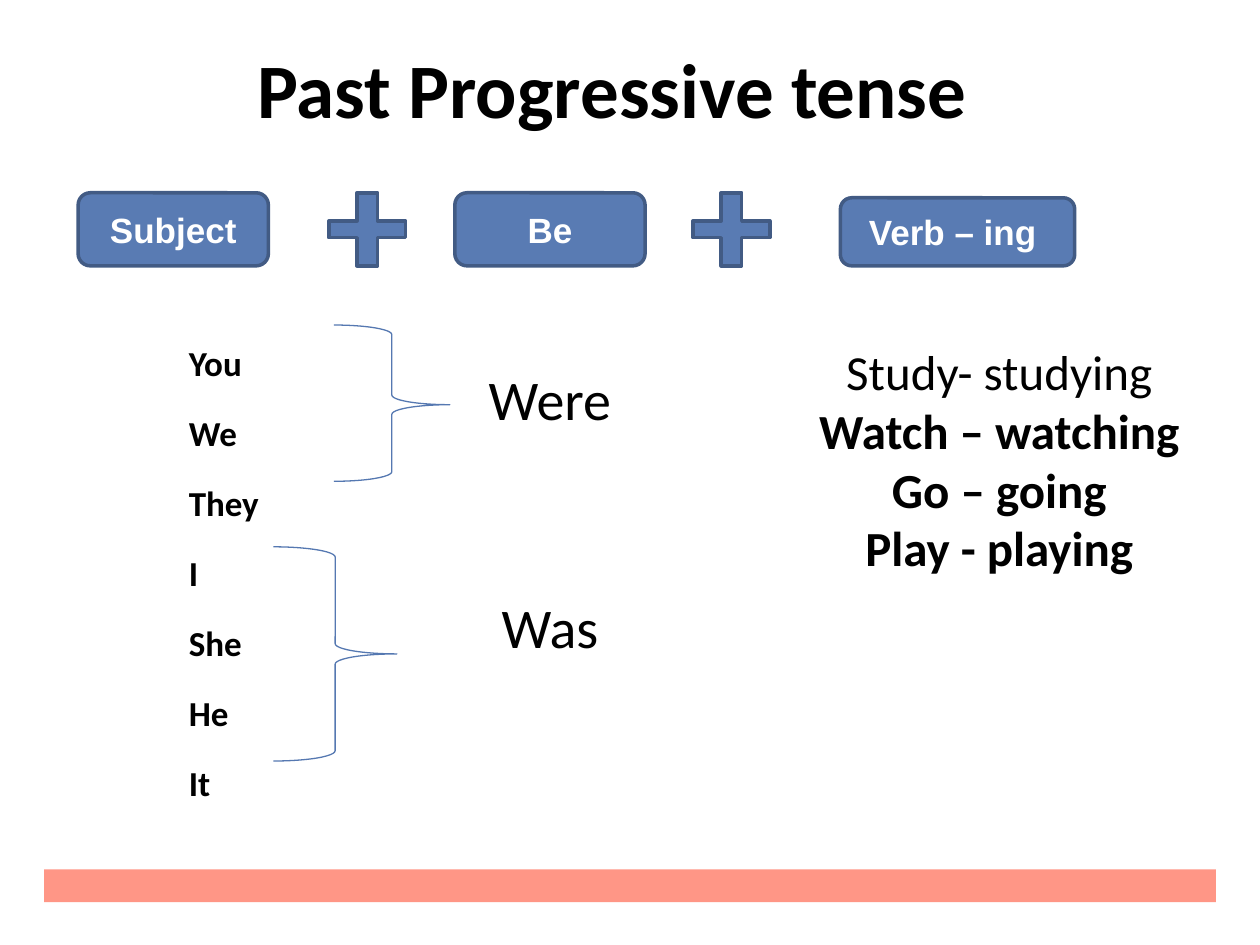
from pptx import Presentation
from pptx.dml.color import RGBColor
from pptx.enum.shapes import MSO_SHAPE
from pptx.enum.text import MSO_ANCHOR, PP_ALIGN
from pptx.util import Inches, Pt

BLACK = RGBColor(0x00, 0x00, 0x00)
WHITE = RGBColor(0xFF, 0xFF, 0xFF)
BLUE = RGBColor(0x59, 0x7B, 0xB3)
DARK_BLUE = RGBColor(0x42, 0x5B, 0x84)
BRACE_BLUE = RGBColor(0x55, 0x78, 0xB1)
SALMON = RGBColor(0xFF, 0x96, 0x86)


def add_shape(kind, left, top, width, height, fill=None, line=None, line_width=2):
    shape = page.shapes.add_shape(
        kind, Inches(left), Inches(top), Inches(width), Inches(height))
    shape.shadow.inherit = False
    if fill is None:
        shape.fill.background()
    else:
        shape.fill.solid()
        shape.fill.fore_color.rgb = fill
    if line is None:
        shape.line.fill.background()
    else:
        shape.line.color.rgb = line
        shape.line.width = Pt(line_width)
    return shape


def write_lines(shape, lines, size, bold=False, color=BLACK, font="Calibri",
                align=PP_ALIGN.CENTER):
    """Fill the shape with one paragraph per line and return the paragraphs."""
    frame = shape.text_frame
    frame.word_wrap = True
    frame.margin_left = frame.margin_right = Inches(0.1)
    frame.margin_top = frame.margin_bottom = Inches(0.1)
    frame.text = "\n".join(lines)
    for paragraph in frame.paragraphs:
        paragraph.alignment = align
        paragraph.font.name = font
        paragraph.font.size = Pt(size)
        paragraph.font.bold = bold
        paragraph.font.color.rgb = color
    return frame.paragraphs


deck = Presentation()
deck.slide_width, deck.slide_height = Inches(10), Inches(7.5)
page = deck.slides.add_slide(deck.slide_layouts[6])

add_shape(MSO_SHAPE.RECTANGLE, 0.35, 6.9, 9.3, 0.26, fill=SALMON)

# Formula: Subject + Be + Verb-ing
for label, left, top, width, height in [
    ("Subject", 0.62, 1.53, 1.51, 0.58),
    ("Be", 3.61, 1.53, 1.51, 0.58),
    ("Verb – ing ", 6.67, 1.57, 1.86, 0.54),
]:
    term = add_shape(MSO_SHAPE.ROUNDED_RECTANGLE, left, top, width, height,
                     BLUE, DARK_BLUE)
    write_lines(term, [label], 20, True, WHITE, "Arial")
    term.text_frame.vertical_anchor = MSO_ANCHOR.MIDDLE

for left in (2.61, 5.5):
    plus = add_shape(MSO_SHAPE.CROSS, left, 1.53, 0.61, 0.58, BLUE, DARK_BLUE)
    plus.adjustments[0] = 0.385

# Braces that group the pronouns by verb form
for left, top, width, height, point in [
    (2.65, 2.58, 0.92, 1.24, 0.51),
    (2.17, 4.34, 0.98, 1.7, 0.5),
]:
    brace = add_shape(MSO_SHAPE.RIGHT_BRACE, left, top, width, height,
                      line=BRACE_BLUE, line_width=0.75)
    brace.adjustments[0] = 0.083
    brace.adjustments[1] = point

# Title, verb forms and examples
for lines, left, top, width, height, size, bold in [
    (["Past Progressive tense"], 0.2, 0.23, 9.32, 0.83, 44, True),
    (["Were"], 3.05, 2.79, 2.63, 0.71, 32, False),
    (["Was"], 3.05, 4.6, 2.63, 0.71, 32, False),
    (["Study- studying", "Watch – watching", "Go – going", "Play - playing"],
     6.07, 2.61, 3.72, 1.49, 28, True),
]:
    box = page.shapes.add_textbox(
        Inches(left), Inches(top), Inches(width), Inches(height))
    paragraphs = write_lines(box, lines, size, bold)
paragraphs[0].font.bold = False

pronouns = page.shapes.add_textbox(
    Inches(1.4), Inches(5.4), Inches(1.45), Inches(0.98))
for paragraph in write_lines(
        pronouns, ["You", "We", "They", "I", "She", "He", "It"], 20, True,
        align=PP_ALIGN.LEFT):
    paragraph.space_after = Pt(16)
pronouns.text_frame.vertical_anchor = MSO_ANCHOR.BOTTOM
pronouns.text_frame.margin_bottom = 0

deck.save("out.pptx")
